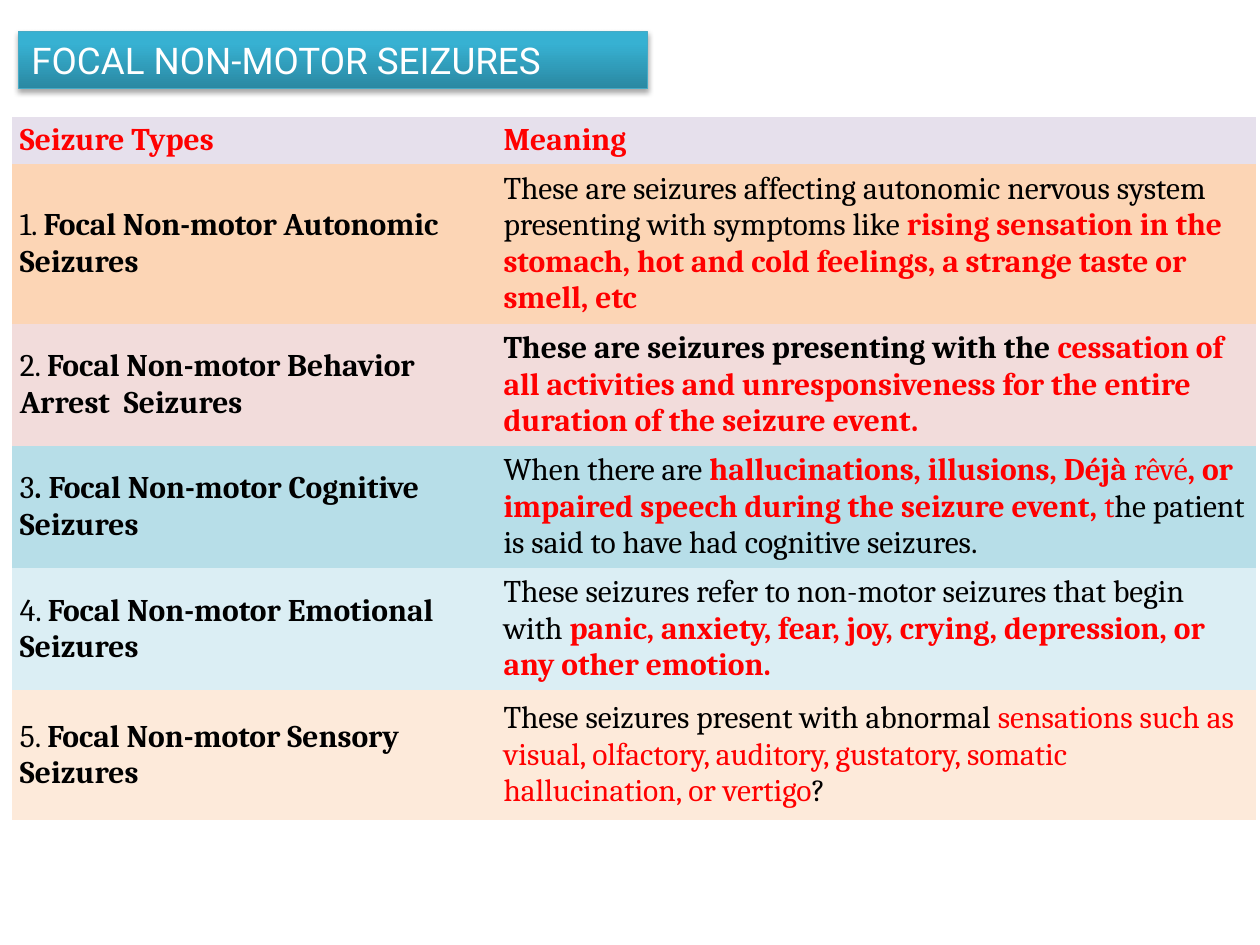
from dataclasses import dataclass

from lxml import etree
from pptx import Presentation
from pptx.dml.color import RGBColor
from pptx.enum import text
from pptx.oxml import ns
from pptx.util import Cm, Pt


@dataclass(frozen=True)
class Theme:
    black: str = "000000"
    red: str = "FF0000"
    white: str = "FFFFFF"
    banner_dark: str = "2A88A2"
    banner_light: str = "37B1D2"
    banner_line: str = "46AAC5"
    title_font: str = "Roboto"
    title_size: int = 21
    table_font: str = "Cambria"
    table_size: int = 18


THEME = Theme()
PLAIN = (THEME.black, False)
BOLD = (THEME.black, True)
RED = (THEME.red, False)
RED_BOLD = (THEME.red, True)
NO_STYLE = "{2D5ABB26-0587-4C30-8999-92F81FD0307C}"

COLUMN_WIDTHS = (9.75, 15.32)
SEIZURE_ROWS = [
    (0.94, "E6E0EC", [("Seizure Types", RED_BOLD)], [("Meaning", RED_BOLD)]),
    (3.23, "FCD5B5",
     [("1. ", PLAIN), ("Focal Non-motor Autonomic Seizures", BOLD)],
     [("These are seizures affecting autonomic nervous system presenting "
       "with symptoms like ", PLAIN),
      ("rising sensation in the stomach, hot and cold feelings, a strange "
       "taste or smell, etc", RED_BOLD)]),
    (2.46, "F2DCDB",
     [("2. ", PLAIN), ("Focal Non-motor Behavior Arrest  Seizures", BOLD)],
     [("These are seizures presenting with the ", BOLD),
      ("cessation of all activities and unresponsiveness for the entire "
       "duration of the seizure event.", RED_BOLD)]),
    (2.46, "B7DEE8",
     [("3", PLAIN), (". Focal Non-motor Cognitive Seizures", BOLD)],
     [("When there are ", PLAIN),
      ("hallucinations, illusions, Déjà ", RED_BOLD),
      ("rêvé", RED),
      (", or impaired speech during the seizure event, ", RED_BOLD),
      ("t", RED),
      ("he patient is said to have had cognitive seizures.", PLAIN)]),
    (2.46, "DBEEF4",
     [("4. ", PLAIN), ("Focal Non-motor Emotional Seizures", BOLD)],
     [("These seizures refer to non-motor seizures that begin with ", PLAIN),
      ("panic, anxiety, fear, joy, crying, depression, or any other "
       "emotion.", RED_BOLD)]),
    (2.62, "FDEADA",
     [("5. ", PLAIN), ("Focal Non-motor Sensory Seizures", BOLD)],
     [("These seizures present with abnormal ", PLAIN),
      ("sensations such as visual, olfactory, auditory, gustatory, somatic "
       "hallucination, or vertigo", RED),
      ("?", PLAIN)]),
]


def color(value):
    return RGBColor.from_string(value)


def add_shadow(shape):
    shape.shadow.inherit = False
    effects = shape._element.spPr.find(ns.qn("a:effectLst"))
    shadow = etree.SubElement(
        effects, ns.qn("a:outerShdw"), blurRad=str(Pt(3.1)),
        dist=str(Pt(1.8)), dir="5400000", rotWithShape="0")
    tint = etree.SubElement(shadow, ns.qn("a:srgbClr"), val=THEME.black)
    etree.SubElement(tint, ns.qn("a:alpha"), val="35000")


def format_title(title, words):
    title.left, title.top = Cm(0.38), Cm(0.64)
    title.width, title.height = Cm(12.67), Cm(1.15)
    title.fill.gradient()
    title.fill.gradient_angle = 90
    dark, light = title.fill.gradient_stops
    dark.position, dark.color.rgb = 0, color(THEME.banner_dark)
    light.position, light.color.rgb = 0.8, color(THEME.banner_light)
    title.line.color.rgb = color(THEME.banner_line)
    title.line.width = Pt(0.75)
    add_shadow(title)
    frame = title.text_frame
    frame.text = words
    frame.auto_size = text.MSO_AUTO_SIZE.NONE
    frame.vertical_anchor = text.MSO_ANCHOR.MIDDLE
    para = frame.paragraphs[0]
    para.alignment = text.PP_ALIGN.LEFT
    para.font.name = THEME.title_font
    para.font.size = Pt(THEME.title_size)
    para.font.color.rgb = color(THEME.white)


def fill_cell(cell, fill, spans):
    cell.fill.solid()
    cell.fill.fore_color.rgb = color(fill)
    cell.vertical_anchor = text.MSO_ANCHOR.MIDDLE
    cell.margin_left = cell.margin_right = Cm(0.16)
    cell.margin_top = cell.margin_bottom = Cm(0.08)
    para = cell.text_frame.paragraphs[0]
    para.font.name = THEME.table_font
    para.font.size = Pt(THEME.table_size)
    for words, (ink, bold) in spans:
        span = para.add_run()
        span.text = words
        span.font.bold = bold
        span.font.color.rgb = color(ink)


def add_seizure_table(page):
    height = sum(row[0] for row in SEIZURE_ROWS)
    table = page.shapes.add_table(
        len(SEIZURE_ROWS), len(COLUMN_WIDTHS), Cm(0.24), Cm(2.36),
        Cm(sum(COLUMN_WIDTHS)), Cm(height)).table
    table.first_row = table.horz_banding = False
    table._tbl.tblPr.find(ns.qn("a:tableStyleId")).text = NO_STYLE
    for column, width in zip(table.columns, COLUMN_WIDTHS):
        column.width = Cm(width)
    for row, (row_height, fill, *contents) in zip(table.rows, SEIZURE_ROWS):
        row.height = Cm(row_height)
        for cell, spans in zip(row.cells, contents):
            fill_cell(cell, fill, spans)


def main():
    deck = Presentation()
    deck.slide_width, deck.slide_height = Cm(25.4), Cm(19.05)
    page = deck.slides.add_slide(deck.slide_layouts.get_by_name("Title Only"))
    format_title(page.shapes.title, "FOCAL NON-MOTOR SEIZURES")
    add_seizure_table(page)
    deck.save("out.pptx")


if __name__ == "__main__":
    main()
